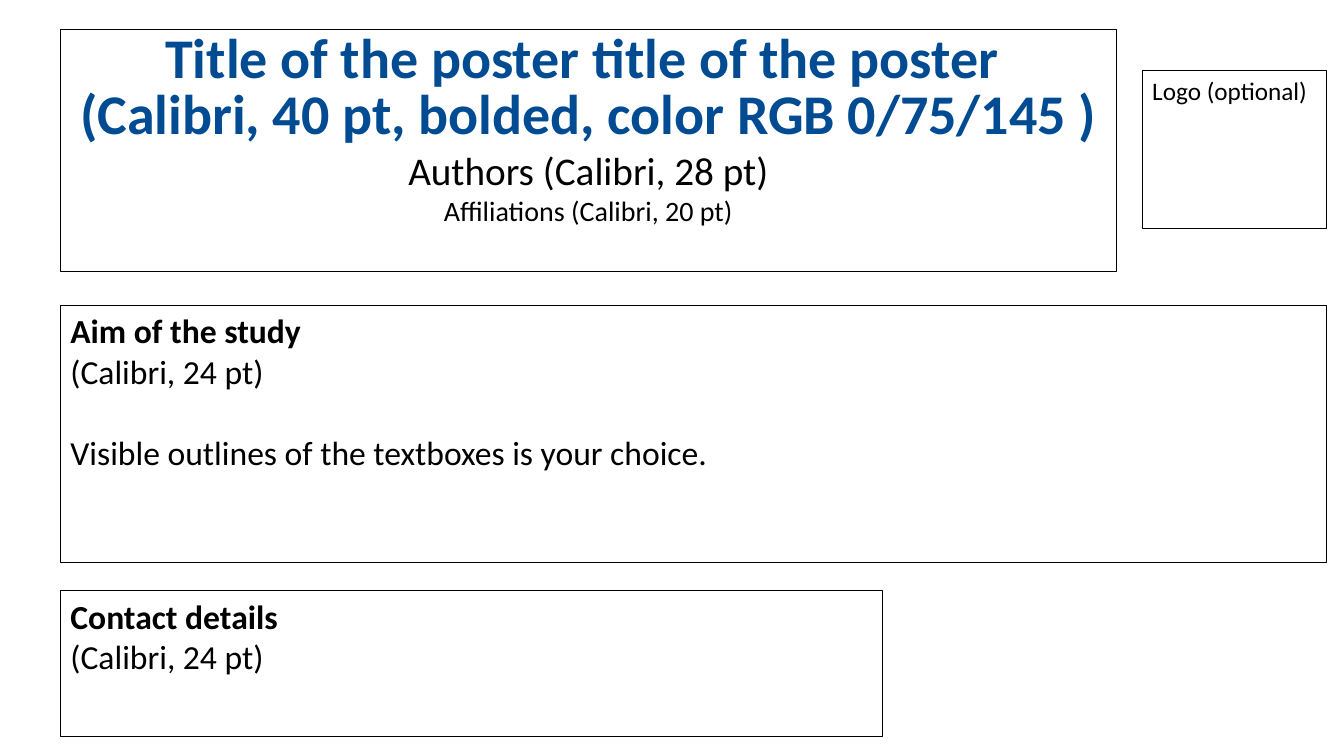
from pptx import Presentation
from pptx.dml.color import RGBColor
from pptx.enum.shapes import MSO_SHAPE
from pptx.enum.text import MSO_ANCHOR, PP_ALIGN
from pptx.util import Inches, Pt

BLACK = "000000"
BLUE = "004B91"
LEFT = 0.6
RIGHT = 13.16


def rgb(value):
    return RGBColor.from_string(value)


class Poster:
    font = "Calibri"

    def __init__(self, prs):
        self.slide = prs.slides.add_slide(prs.slide_layouts[6])

    def box(self, left, top, width, height):
        """Add an outlined box and return its text frame."""
        s = self.slide.shapes.add_shape(
            MSO_SHAPE.RECTANGLE,
            Inches(left), Inches(top), Inches(width), Inches(height))
        s.shadow.inherit = False
        s.fill.background()
        s.line.color.rgb = rgb(BLACK)
        s.line.width = Pt(0.75)
        tf = s.text_frame
        tf.word_wrap = True
        tf.vertical_anchor = MSO_ANCHOR.TOP
        return tf

    def text(self, tf, text, size, bold=False, color=BLACK,
             align=PP_ALIGN.LEFT, spacing=None, before=None):
        """Fill the first paragraph if it is free, otherwise add one."""
        p = tf.add_paragraph() if tf.text else tf.paragraphs[0]
        p.text = text
        p.alignment = align
        if spacing:
            p.line_spacing = Pt(spacing)
        if before:
            p.space_before = Pt(before)
        p.font.name = self.font
        p.font.size = Pt(size)
        p.font.bold = bold
        p.font.color.rgb = rgb(color)

    def section(self, heading, top, width, height):
        tf = self.box(LEFT, top, width, height)
        self.text(tf, heading, 24, bold=True)
        self.text(tf, "(Calibri, 24 pt)", 24)
        return tf


def main():
    prs = Presentation()
    prs.slide_width = Inches(13.33)
    prs.slide_height = Inches(7.5)
    poster = Poster(prs)

    header = poster.box(LEFT, 0.29, 10.47, 2.4)
    poster.text(header,
                "Title of the poster title of the poster \v"
                "(Calibri, 40 pt, bolded, color RGB 0/75/145 )",
                40, bold=True, color=BLUE, align=PP_ALIGN.CENTER, spacing=40)
    poster.text(header, "Authors (Calibri, 28 pt)", 28, align=PP_ALIGN.CENTER)
    poster.text(header, "Affiliations (Calibri, 20 pt)", 20,
                align=PP_ALIGN.CENTER)

    aim = poster.section("Aim of the study", 3.03, RIGHT - LEFT, 2.55)
    poster.text(aim, "Visible outlines of the textboxes is your choice.", 24,
                before=29.3)

    logo = poster.box(11.33, 0.7, RIGHT - 11.33, 1.57)
    poster.text(logo, "Logo (optional)", 18)

    poster.section("Contact details", 5.86, 8.15, 1.45)

    prs.save("out.pptx")


if __name__ == "__main__":
    main()
